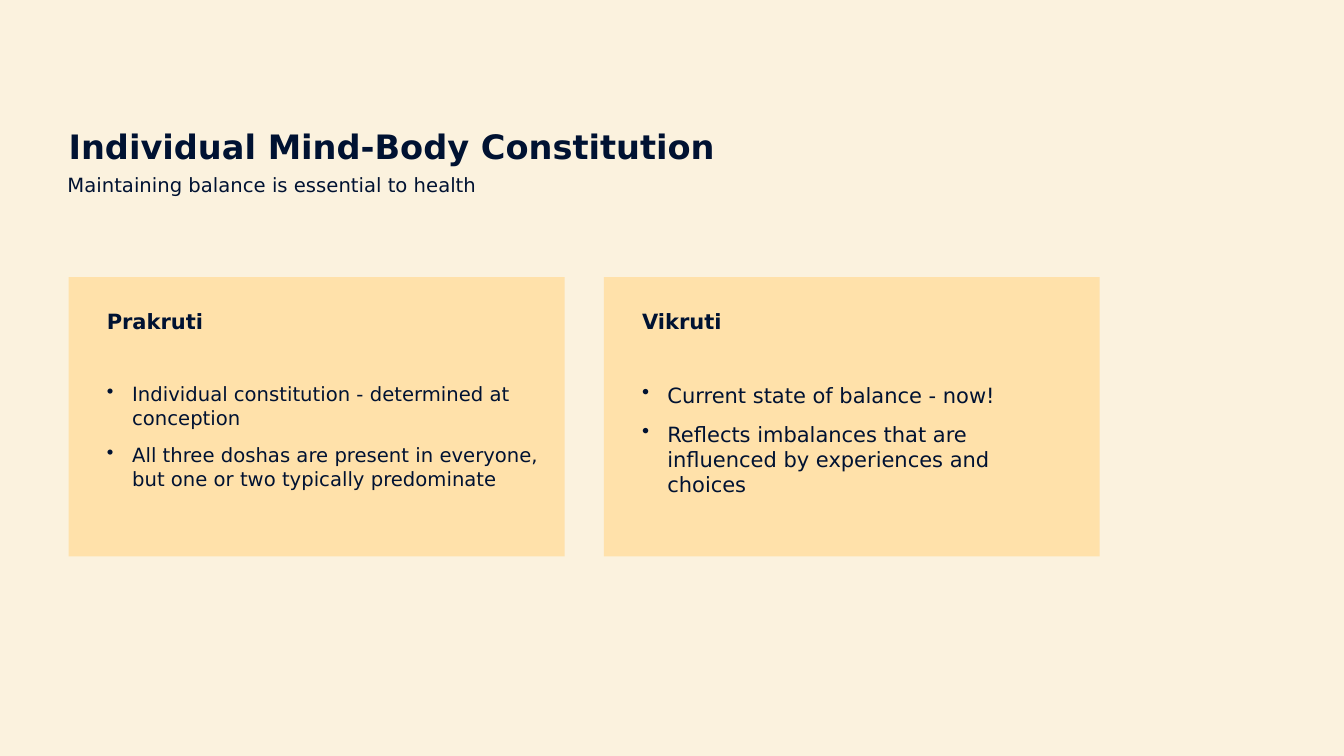
from lxml.etree import SubElement
from pptx import Presentation
from pptx.dml.color import RGBColor
from pptx.enum.shapes import MSO_SHAPE
from pptx.enum.text import MSO_ANCHOR
from pptx.oxml.ns import qn
from pptx.util import Pt

COLORS = {"background": "FBF2DE", "card": "FFE1AA", "text": "001232"}
TITLE = {"size": Pt(24), "bold": True}
SUBTITLE = {"size": Pt(14)}
HEADING = {"size": Pt(15), "bold": True}
CARD_LEFT, CARD_TOP, CARD_STEP = 49, 198, 382.3
CARDS = [
    ("Prakruti", 14, [
        "Individual constitution - determined at conception",
        "All three doshas are present in everyone, but one or two typically predominate",
    ]),
    ("Vikruti", 15, [
        "Current state of balance - now!",
        "Reflects imbalances that are influenced by experiences and choices",
    ]),
]


def color(name):
    return RGBColor.from_string(COLORS[name])


def set_attributes(target, values):
    for name, value in values.items():
        setattr(target, name, value)


def add_bullet(paragraph):
    properties = paragraph._p.get_or_add_pPr()
    properties.set("marL", str(Pt(18)))
    properties.set("indent", str(Pt(-18)))
    SubElement(properties, qn("a:buChar"), char="•")


def add_text(slide, box, texts, font, inset=(0, 0), bulleted=False, frame_format=None,
             paragraph_format=None):
    shape = slide.shapes.add_textbox(*map(Pt, box))
    frame = shape.text_frame
    horizontal, vertical = map(Pt, inset)
    set_attributes(frame, {
        "word_wrap": True,
        "margin_left": horizontal,
        "margin_right": horizontal,
        "margin_top": vertical,
        "margin_bottom": vertical,
        **(frame_format or {}),
    })
    for index, text in enumerate(texts):
        paragraph = frame.add_paragraph() if index else frame.paragraphs[0]
        paragraph.text = text
        if bulleted:
            add_bullet(paragraph)
        if index:
            paragraph.space_before = Pt(10)
        set_attributes(paragraph, paragraph_format or {})
        set_attributes(paragraph.font, {"name": "DejaVu Sans", **font})
        paragraph.font.color.rgb = color("text")


def add_card(slide, left, heading, size, bullets):
    card = slide.shapes.add_shape(
        MSO_SHAPE.RECTANGLE, Pt(left), Pt(CARD_TOP), Pt(354.24), Pt(199.4))
    card.shadow.inherit = False
    card.fill.solid()
    card.fill.fore_color.rgb = color("card")
    card.line.fill.background()
    add_text(slide, (left + 20.2, CARD_TOP + 18.7, 267.8, 26), [heading], HEADING,
             inset=(7.2, 3.6))
    add_text(slide, (left + 27.4, CARD_TOP + 74.9, 308.9, 100), bullets,
             {"size": Pt(size)}, bulleted=True)


def main():
    presentation = Presentation()
    presentation.slide_width = Pt(960)
    presentation.slide_height = Pt(540)
    slide = presentation.slides.add_slide(presentation.slide_layouts[6])
    slide.background.fill.solid()
    slide.background.fill.fore_color.rgb = color("background")

    add_text(slide, (CARD_LEFT, 79.2, 792, 44.6), ["Individual Mind-Body Constitution"],
             TITLE, frame_format={"vertical_anchor": MSO_ANCHOR.MIDDLE},
             paragraph_format={"line_spacing": 1.2})
    add_text(slide, (48.2, 123.8, 365.8, 27.4),
             ["Maintaining balance is essential to health"], SUBTITLE)
    for index, (heading, size, bullets) in enumerate(CARDS):
        add_card(slide, CARD_LEFT + index * CARD_STEP, heading, size, bullets)

    presentation.save("out.pptx")


if __name__ == "__main__":
    main()
